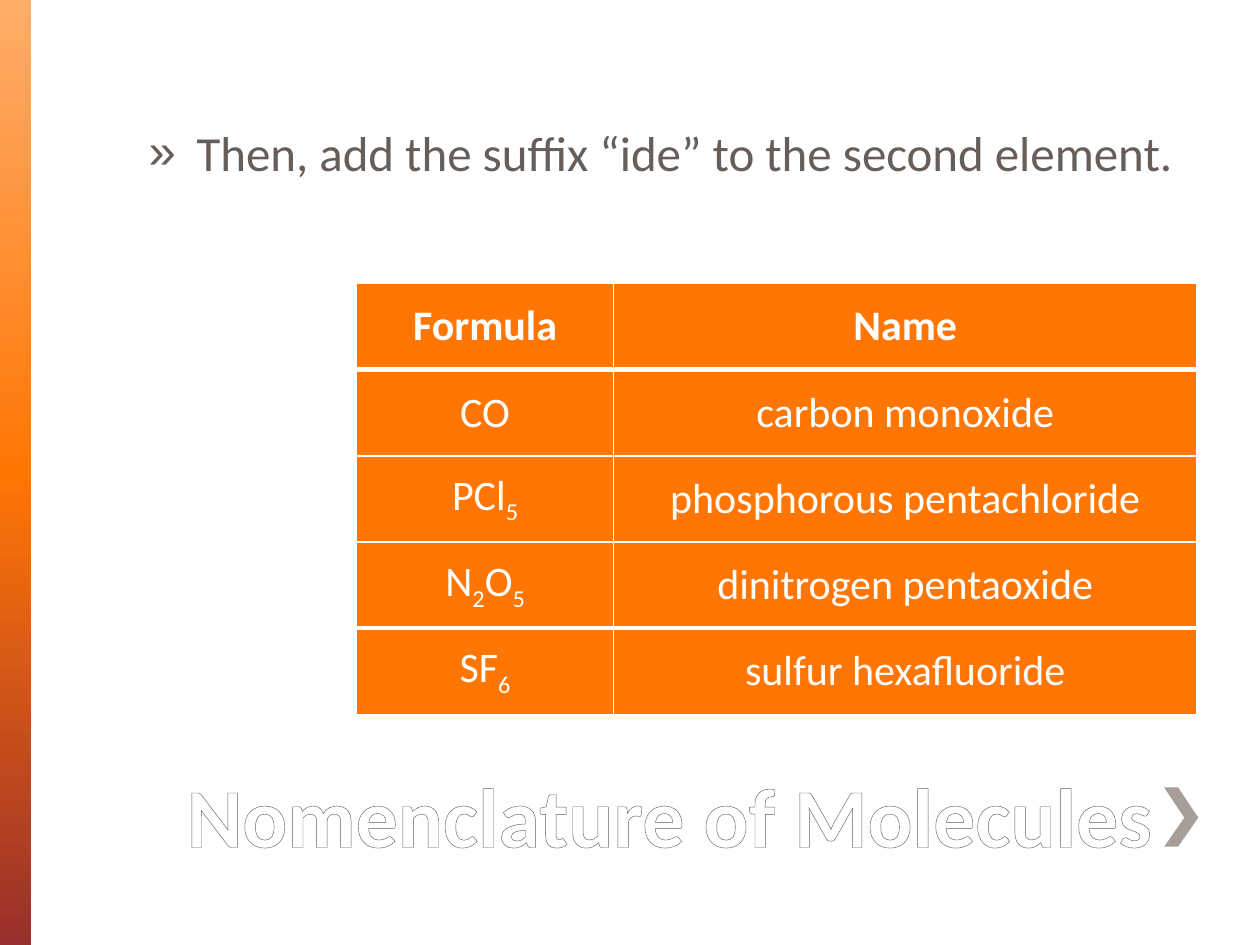
from itertools import groupby

from lxml.etree import SubElement
from pptx import Presentation
from pptx.dml.color import RGBColor
from pptx.enum.text import MSO_ANCHOR, MSO_AUTO_SIZE, PP_ALIGN
from pptx.enum.shapes import MSO_SHAPE
from pptx.oxml import parse_xml
from pptx.oxml.ns import nsdecls, qn
from pptx.util import Inches, Pt

WHITE = RGBColor(0xFF, 0xFF, 0xFF)
PEACH = RGBColor(0xFF, 0xAD, 0x69)
ORANGE = RGBColor(0xFF, 0x76, 0x05)
RED = RGBColor(0x9A, 0x2F, 0x2C)
TAUPE = RGBColor(0x67, 0x5D, 0x59)
GREY = RGBColor(0xA7, 0x9D, 0x99)

ROWS = [
    ("Formula", "Name"),
    ("CO", "carbon monoxide"),
    ("PCl5", "phosphorous pentachloride"),
    ("N2O5", "dinitrogen pentaoxide"),
    ("SF6", "sulfur hexafluoride"),
]
THICK_RULES = (1, 4)  # row boundaries with a heavy line


def line_xml(tag, width, color):
    return parse_xml(
        f'<a:{tag} {nsdecls("a")} w="{Pt(width)}"><a:solidFill>'
        f'<a:srgbClr val="{color}"/></a:solidFill></a:{tag}>')


class SlideBuilder:
    font = "Calibri"

    def __init__(self, slide):
        self.s = slide

    def run(self, p, text, size, color, bold=False):
        r = p.add_run()
        r.text = text
        r.font.name, r.font.size, r.font.bold = self.font, Pt(size), bold
        r.font.color.rgb = color
        return r

    def place(self, sp, left, top, width, height, anchor):
        sp.left, sp.top = Inches(left), Inches(top)
        sp.width, sp.height = Inches(width), Inches(height)
        tf = sp.text_frame
        tf.word_wrap = True
        tf.auto_size = MSO_AUTO_SIZE.NONE
        tf.vertical_anchor = anchor
        return tf.paragraphs[0]

    def gradient_bar(self, left, top, width, height, stops):
        sp = self.s.shapes.add_shape(MSO_SHAPE.RECTANGLE, Inches(left), Inches(top),
                                     Inches(width), Inches(height))
        sp.shadow.inherit = False
        sp.line.fill.background()
        sp.fill.gradient()
        grad = sp.fill._xPr.find(qn("a:gradFill"))
        gs = "".join(f'<a:gs pos="{pos * 1000}"><a:srgbClr val="{c}"/></a:gs>'
                     for pos, c in stops)
        new = parse_xml(f'<a:gradFill {nsdecls("a")} rotWithShape="1"><a:gsLst>{gs}</a:gsLst>'
                        '<a:lin ang="5400000" scaled="0"/></a:gradFill>')
        grad.getparent().replace(grad, new)

    def outline(self, points, color):
        pts = [(Inches(x), Inches(y)) for x, y in points]
        fb = self.s.shapes.build_freeform(*pts[0])
        fb.add_line_segments(pts[1:], close=True)
        sp = fb.convert_to_shape()
        sp.shadow.inherit = False
        sp.fill.solid()
        sp.fill.fore_color.rgb = color
        sp.line.fill.background()

    def title(self, text, *box):
        p = self.place(self.s.shapes.title, *box, MSO_ANCHOR.BOTTOM)
        p.alignment = PP_ALIGN.RIGHT
        r = self.run(p, text, 48, WHITE, bold=True)
        r.font._element.insert(0, line_xml("ln", 1, TAUPE))

    def bullet(self, text, *box):
        p = self.place(self.s.placeholders[1], *box, MSO_ANCHOR.TOP)
        p.space_before = Pt(5.6)
        pPr = p._p.get_or_add_pPr()
        pPr.set("marL", str(Inches(0.38)))
        pPr.set("indent", str(Inches(-0.38)))
        SubElement(pPr, qn("a:buChar")).set("char", "»")
        self.run(p, text, 28, TAUPE)

    def cell(self, cell, text, bold, top, bottom):
        cell.margin_left = cell.margin_right = Inches(0.07)
        cell.margin_top = cell.margin_bottom = 0
        cell.vertical_anchor = MSO_ANCHOR.MIDDLE
        tcPr = cell._tc.get_or_add_tcPr()
        for tag, width in (("lnL", 1), ("lnR", 1), ("lnT", top), ("lnB", bottom)):
            tcPr.append(line_xml(tag, width, WHITE))
        cell.fill.solid()
        cell.fill.fore_color.rgb = ORANGE
        p = cell.text_frame.paragraphs[0]
        p.alignment = PP_ALIGN.CENTER
        # Digits in a formula are subscripts
        for digits, chars in groupby(text, str.isdigit):
            r = self.run(p, "".join(chars), 24, WHITE, bold)
            if digits:
                r.font._element.set("baseline", "-25000")

    def table(self, rows, left, top, widths, height):
        table = self.s.shapes.add_table(len(rows), len(widths), Inches(left), Inches(top),
                                        Inches(sum(widths)), Inches(height)).table
        for col, width in zip(table.columns, widths):
            col.width = Inches(width)
        for i, row in enumerate(rows):
            above, below = (3 if n in THICK_RULES else 1 for n in (i, i + 1))
            for j, text in enumerate(row):
                self.cell(table.cell(i, j), text, i == 0, above, below)


def main():
    prs = Presentation()
    prs.slide_width, prs.slide_height = Inches(10), Inches(7.5)
    b = SlideBuilder(prs.slides.add_slide(prs.slide_layouts[1]))

    # Side bar and chevron
    b.gradient_bar(0, 0, 0.25, 7.5, [(0, PEACH), (50, ORANGE), (100, RED)])
    b.outline([(9.35, 6.25), (9.24, 6.25), (9.4, 6.49), (9.24, 6.72),
               (9.35, 6.72), (9.51, 6.49)], GREY)

    # Title and text
    b.title("Nomenclature of Molecules", 1.33, 5.58, 7.92, 1.33)
    b.bullet("Then, add the suffix “ide” to the second element.", 1.08, 0.92, 8.42, 5.17)

    # Formulas and their names
    b.table(ROWS, 2.83, 2.25, (2.04, 4.63), 3.42)

    prs.save("out.pptx")


if __name__ == "__main__":
    main()
